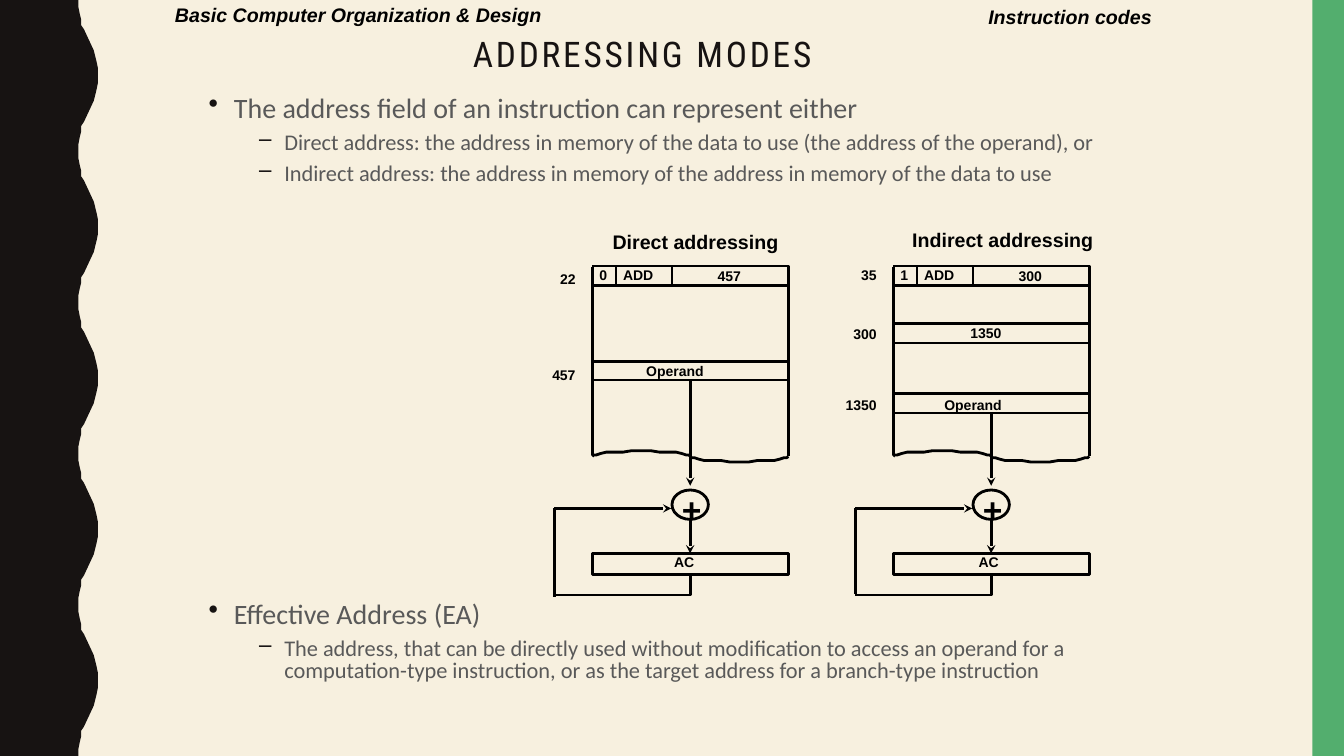
import math
import pptx
import pptx.util
import pptx.dml.color
import pptx.enum.shapes
import pptx.enum.text
import pptx.oxml.ns
import pptx.oxml.xmlchemy

Pt = pptx.util.Pt
RGB = pptx.dml.color.RGBColor
MSO = pptx.enum.shapes.MSO_SHAPE
ALIGN = pptx.enum.text.PP_ALIGN
ANCHOR = pptx.enum.text.MSO_ANCHOR
qn = pptx.oxml.ns.qn
make = pptx.oxml.xmlchemy.OxmlElement

CREAM = RGB(0xF7, 0xF0, 0xDF)
DARK = RGB(0x17, 0x13, 0x12)
GREEN = RGB(0x53, 0xAE, 0x6E)
GRAY = RGB(0x59, 0x59, 0x59)
BLACK = RGB(0, 0, 0)

# Content
TITLE = "ADDRESSING MODES"
UPPER = [
    (0, "The address field of an instruction can represent either"),
    (1, "Direct address: the address in memory of the data to use "
        "(the address of the operand), or"),
    (1, "Indirect address: the address in memory of the address "
        "in memory of the data to use"),
]
LOWER = [
    (0, "Effective Address (EA)"),
    (1, "The address, that can be directly used without modification to access "
        "an operand for a computation-type instruction, or as the target address "
        "for a branch-type instruction"),
]
# head: text, dx, top, width; word: mode bit, address field
# cells: top line, bottom line, text, dx, text top
# marks: memory address, top; ac: dx of its label; foot: end of the loop
MODES = [
    dict(left=423, head=("Direct addressing", 7.5, 160.5, 133),
         word=("0", "457"), cells=[(258.5, 271.5, "Operand", 31.5, 255.5)],
         marks=[("22", 190), ("457", 258.5)], ac=51.5, foot=426.5),
    dict(left=638, head=("Indirect addressing", 6.5, 159, 144),
         word=("1", "300"),
         cells=[(231, 245, "1350", 48, 228), (281, 295, "Operand", 29.5, 279.5)],
         marks=[("35", 187), ("300", 229), ("1350", 279.5)], ac=54, foot=424.5),
]
WIDE = {"ADD": 36.5, "Operand": 55.5, "AC": 28.8, "+": 28.8}
# Half a period of the wavy edge, as x, y
WAVE = [(56.2, 0), (56.2, 5), (56.9, 10), (57.6, 14.4), (58.3, 18), (59.8, 21),
        (67, 36), (68.4, 39.6), (69.1, 43.9), (69.8, 49), (69.8, 54)]
PERIOD = 108

deck = pptx.Presentation()
deck.slide_width, deck.slide_height = Pt(960), Pt(540)
slide = deck.slides.add_slide(deck.slide_layouts[5])
slide.background.fill.solid()
slide.background.fill.fore_color.rgb = CREAM
shapes = slide.shapes


def style(font, color, **form):
    font.color.rgb = color
    for key, val in form.items():
        setattr(font, key, val)


def label(text, x, y, w, h=19.5, size=10, inset=(7.2, 3.6), **form):
    frame = shapes.add_textbox(Pt(x), Pt(y), Pt(w), Pt(h)).text_frame
    frame.word_wrap = False
    frame.margin_left = frame.margin_right = Pt(inset[0])
    frame.margin_top = frame.margin_bottom = Pt(inset[1])
    run = frame.paragraphs[0].add_run()
    run.text = text
    style(run.font, BLACK, name="Arial", size=Pt(size), bold=True, **form)
    return frame


def paint(shape, fill=None):
    shape.shadow.inherit = False
    if fill is None:
        shape.fill.background()
        shape.line.color.rgb = BLACK
        shape.line.width = Pt(2)
    else:
        shape.fill.solid()
        shape.fill.fore_color.rgb = fill
        shape.line.fill.background()
    return shape


def trace(points, close=False, fill=None):
    pen = shapes.build_freeform(*points[0], scale=Pt(1))
    pen.add_line_segments(points[1:], close=close)
    return paint(pen.convert_to_shape(), fill)


def box(kind, x, y, w, h, fill=None):
    return paint(shapes.add_shape(kind, Pt(x), Pt(y), Pt(w), Pt(h)), fill)


def rule(x1, y1, x2, y2, arrow=False):
    line = shapes.add_connector(1, Pt(x1), Pt(y1), Pt(x2), Pt(y2))
    line.line.color.rgb = BLACK
    line.line.width = Pt(2)
    props = line._element.spPr
    if arrow:
        tip = make("a:tailEnd")
        tip.set("type", "stealth")
        props.find(qn("a:ln")).append(tip)
    props.append(make("a:effectLst"))
    return line


def outline(items, y, h):
    frame = shapes.add_textbox(Pt(142), Pt(y), Pt(680), Pt(h)).text_frame
    frame.word_wrap = True
    for num, (level, text) in enumerate(items):
        para = frame.add_paragraph() if num else frame.paragraphs[0]
        para.level = level
        para.line_spacing = 0.8
        para.space_before = Pt(7)
        run = para.add_run()
        run.text = text
        style(run.font, GRAY, name="Calibri", size=Pt((20, 16)[level]))
        props = para._p.get_or_add_pPr()
        props.set("marL", str(int(Pt((18, 54)[level]))))
        props.set("indent", str(-int(Pt(18))))
        tint = make("a:buClr")
        shade = make("a:srgbClr")
        shade.set("val", str(DARK))
        tint.append(shade)
        mark = make("a:buChar")
        mark.set("char", "•–"[level])
        props.extend([tint, mark])


# Side bands
half = WAVE + [(x, PERIOD - y) for x, y in WAVE[-2:0:-1]]
edge = [(x, y + k * PERIOD) for k in range(5) for x, y in half]
trace([(0, 0)] + edge + [(WAVE[0][0], 540), (0, 540)], True, DARK)
box(MSO.RECTANGLE, 937.5, 0, 22.5, 540, GREEN)

# Title and running heads
title = shapes.title
title.left, title.top, title.width, title.height = Pt(330.5), Pt(24), Pt(307), Pt(33)
frame = title.text_frame
frame.text = TITLE
frame.word_wrap = True
frame.vertical_anchor = ANCHOR.MIDDLE
frame.auto_size = pptx.enum.text.MSO_AUTO_SIZE.NONE
para = frame.paragraphs[0]
para.alignment = ALIGN.LEFT
para.line_spacing = 0.87
style(para.runs[0].font, DARK, name="Roboto Condensed", size=Pt(25.2))
para.runs[0]._r.get_or_add_rPr().set("spc", "200")
label("Basic Computer Organization & Design", 120, 0, 273.5, 21, 14,
      inset=(5, 2.2), italic=True)
topic = label("Instruction codes", 698.5, 0, 131.5, 24, 14, italic=True)
topic.paragraphs[0].alignment = ALIGN.RIGHT

# Bullets
outline(UPPER, 65.5, 75)
outline(LOWER, 427, 75)


def note(text, x, y, right=False, **form):
    wide = WIDE.get(text, 14.4 + 5.56 * len(text))
    label(text, x - wide if right else x, y, wide, **form)


# Addressing diagrams
for mode in MODES:
    x = mode["left"]
    end, mid = x + 140, x + 70
    text, dx, y, w = mode["head"]
    label(text, x + dx, y, w, 24, 14)

    # Memory block with a torn lower edge
    trace([(x, 189.5), (end, 189.5), (end, 325.5)])
    rule(x, 190.5, x, 325)
    trace([(x + 70 * part + 35 * (1 - math.cos(t * math.pi / 16)),
            326 + (2 * part - 1) * 3.6 * math.sin(t * math.pi / 16))
           for part in (0, 1) for t in range(17)])

    # Instruction word
    rule(x, 203.8, end, 203.8)
    for dx in (17, 57):
        rule(x + dx, 190, x + dx, 203.5)
    bit, field = mode["word"]
    note(bit, x - 2, 186.5)
    note("ADD", x + 15, 186.5)
    note(field, x + 82.5, 187.2)

    # Memory cells and their addresses
    for top, low, text, dx, y in mode["cells"]:
        rule(x, top, end, top)
        rule(x, low, end, low)
        note(text, x + dx, y)
    for text, y in mode["marks"]:
        note(text, x - 4.5, y, right=True)

    # Adder, accumulator and feedback loop
    box(MSO.OVAL, mid - 13, 350, 26, 21)
    note("+", x + 57, 345.5, h=36, size=24)
    store = box(MSO.RECTANGLE, x, 395.3, 140, 15)
    note("AC", x + mode["ac"], 391.7)
    back = x - 27
    trace([(mid, 411), (mid, 424.7), (back, 424.7)])
    rule(back, 363, back, mode["foot"])
    rule(back, 363.2, mid - 13.5, 363.2, arrow=True)
    rule(mid, low, mid, 347, arrow=True)
    rule(mid, 371, mid, 395.3, arrow=True).end_connect(store, 0)

deck.save("out.pptx")
